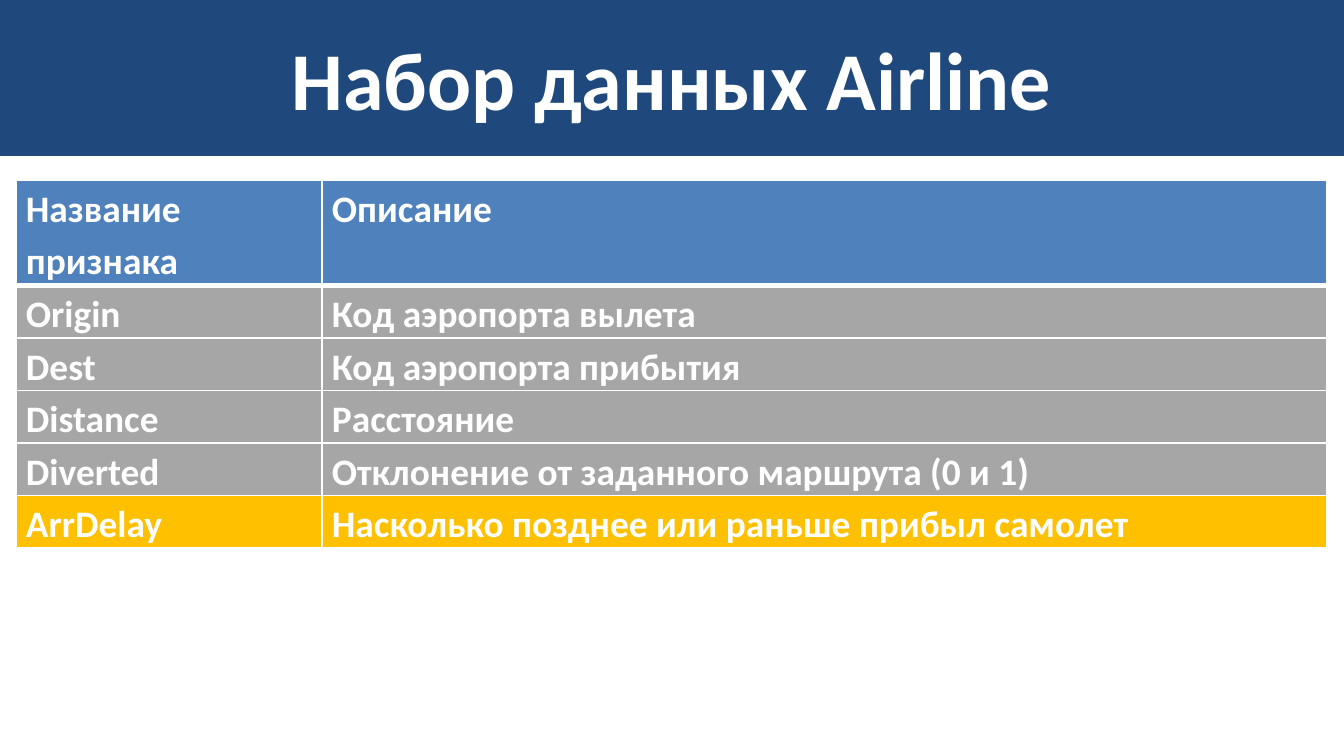
from lxml.etree import SubElement
from pptx import Presentation
from pptx.dml.color import RGBColor
from pptx.enum.text import MSO_ANCHOR, PP_ALIGN
from pptx.oxml.ns import qn
from pptx.util import Inches, Pt

TITLE = "Набор данных Airline"
ROWS = [
    ("Название признака", "Описание", "header"),
    ("Origin", "Код аэропорта вылета", "feature"),
    ("Dest", "Код аэропорта прибытия", "feature"),
    ("Distance", "Расстояние", "feature"),
    ("Diverted", "Отклонение от заданного маршрута (0 и 1)", "feature"),
    ("ArrDelay", "Насколько позднее или раньше прибыл самолет", "target"),
]
COLORS = {
    "title": "1F497D",
    "header": "4F81BD",
    "feature": "A6A6A6",
    "target": "FFC000",
    "white": "FFFFFF",
}
COL_WIDTHS = (306, 1005)
HEADER_H, ROW_H = 105, 52


def px(n):
    return Inches(n / 134.4)


def color(name):
    return RGBColor.from_string(COLORS[name])


def paint(fill, name):
    fill.solid()
    fill.fore_color.rgb = color(name)


def format_text(p, size):
    for r in p.runs:
        r.font.name = "Calibri"
        r.font.size = Pt(size)
        r.font.bold = True
        r.font.color.rgb = color("white")


def add_borders(cell, bottom):
    tcPr = cell._tc.get_or_add_tcPr()
    for side, width in (("L", 1), ("R", 1), ("T", 1), ("B", bottom)):
        ln = SubElement(tcPr, qn(f"a:ln{side}"), w=str(Pt(width)))
        fill = SubElement(ln, qn("a:solidFill"))
        SubElement(fill, qn("a:srgbClr"), val=COLORS["white"])


def add_title(s):
    sp = s.shapes.title
    sp.left, sp.top, sp.width, sp.height = px(0), px(0), px(1344), px(156)
    paint(sp.fill, "title")
    tf = sp.text_frame
    tf.text = TITLE
    tf.vertical_anchor = MSO_ANCHOR.MIDDLE
    p = tf.paragraphs[0]
    p.alignment = PP_ALIGN.CENTER
    format_text(p, 44)


def add_features(s):
    heights = [HEADER_H] + [ROW_H] * (len(ROWS) - 1)
    table = s.shapes.add_table(len(ROWS), len(COL_WIDTHS), px(16), px(180),
                               px(sum(COL_WIDTHS)), px(sum(heights))).table
    for col, width in zip(table.columns, COL_WIDTHS):
        col.width = px(width)
    for i, (*texts, kind) in enumerate(ROWS):
        table.rows[i].height = px(heights[i])
        for j, text in enumerate(texts):
            cell = table.cell(i, j)
            cell.margin_left = cell.margin_right = px(10)
            cell.margin_top = cell.margin_bottom = 0
            add_borders(cell, 3 if kind == "header" else 1)
            paint(cell.fill, kind)
            cell.text_frame.text = text
            p = cell.text_frame.paragraphs[0]
            p.line_spacing = 1.15
            p.space_after = Pt(6)
            format_text(p, 20)


def main():
    prs = Presentation()
    prs.slide_width, prs.slide_height = px(1344), px(756)
    s = prs.slides.add_slide(prs.slide_layouts[5])
    add_title(s)
    add_features(s)
    prs.save("out.pptx")


if __name__ == "__main__":
    main()
